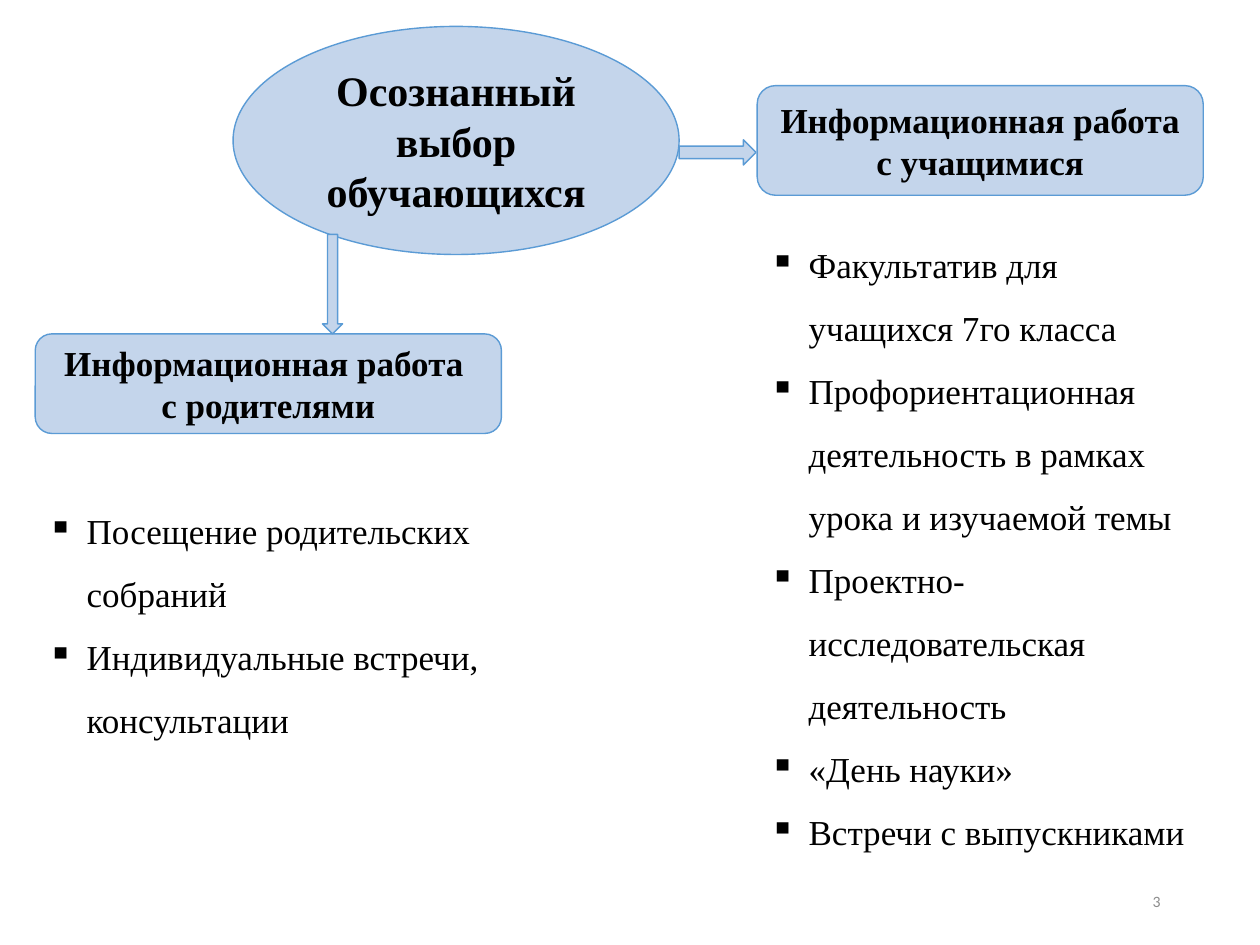
import dataclasses

import pptx
import pptx.util
import pptx.dml.color
import pptx.enum.shapes
import pptx.enum.text
from lxml import etree

Inches = pptx.util.Inches
Pt = pptx.util.Pt
RGB = pptx.dml.color.RGBColor
Shape = pptx.enum.shapes.MSO_SHAPE
Align = pptx.enum.text.PP_ALIGN
Anchor = pptx.enum.text.MSO_ANCHOR
AutoSize = pptx.enum.text.MSO_AUTO_SIZE


@dataclasses.dataclass(frozen=True)
class Theme:
    font: str = "Times New Roman"
    number_font: str = "Calibri"
    fill: RGB = RGB(0xC4, 0xD5, 0xEB)
    line: RGB = RGB(0x5B, 0x9B, 0xD5)
    ink: RGB = RGB(0, 0, 0)
    muted: RGB = RGB(0x8C, 0x8C, 0x8C)
    line_width: float = 0.79
    goal_size: int = 24
    body_size: int = 20
    number_size: int = 9


THEME = Theme()


def write(frame, lines, size, color=THEME.ink, font=THEME.font, bold=False, align=Align.LEFT):
    frame.word_wrap = True
    frame.text = "\n".join(lines)
    for paragraph in frame.paragraphs:
        paragraph.alignment = align
        for run in paragraph.runs:
            run.font.name = font
            run.font.size = Pt(size)
            run.font.bold = bold
            run.font.color.rgb = color


def add_block(slide, kind, box, lines=(), size=THEME.body_size):
    block = slide.shapes.add_shape(kind, *map(Inches, box))
    block.shadow.inherit = False
    block.fill.solid()
    block.fill.fore_color.rgb = THEME.fill
    block.line.color.rgb = THEME.line
    block.line.width = Pt(THEME.line_width)
    if lines:
        block.text_frame.vertical_anchor = Anchor.MIDDLE
        write(block.text_frame, lines, size, bold=True, align=Align.CENTER)


def add_bullets(slide, box, items):
    frame = slide.shapes.add_textbox(*map(Inches, box)).text_frame
    write(frame, items, THEME.body_size)
    frame.auto_size = AutoSize.SHAPE_TO_FIT_TEXT
    indent = Inches(0.31)
    for paragraph in frame.paragraphs:
        paragraph.line_spacing = 1.5
        properties = paragraph._p.get_or_add_pPr()
        properties.set("marL", str(indent))
        properties.set("indent", str(-indent))
        bullet = etree.SubElement(properties, pptx.oxml.ns.qn("a:buChar"))
        bullet.set("char", "▪")


def add_slide_number(slide, box, number):
    frame = slide.shapes.add_textbox(*map(Inches, box)).text_frame
    frame.vertical_anchor = Anchor.MIDDLE
    write(frame, [number], THEME.number_size, THEME.muted, THEME.number_font, align=Align.RIGHT)


def main():
    deck = pptx.Presentation()
    deck.slide_width, deck.slide_height = Inches(10), Inches(7.5)
    slide = deck.slides.add_slide(deck.slide_layouts[6])

    parents_left, parents_width = 0.28, 3.7
    pupils_left, pupils_width = 6.01, 3.54

    add_slide_number(slide, (7.06, 6.95, 2.25, 0.4), "3")
    add_block(slide, Shape.OVAL, (1.85, 0.21, 3.54, 1.81),
              ["Осознанный выбор", "обучающихся"], THEME.goal_size)
    add_block(slide, Shape.ROUNDED_RECTANGLE, (parents_left, 2.65, parents_width, 0.79),
              ["Информационная работа ", "с родителями"])
    add_block(slide, Shape.ROUNDED_RECTANGLE, (pupils_left, 0.68, pupils_width, 0.87),
              ["Информационная работа с учащимися"])
    add_block(slide, Shape.DOWN_ARROW, (2.56, 1.86, 0.16, 0.79))
    add_block(slide, Shape.RIGHT_ARROW, (5.39, 1.11, 0.61, 0.2))

    add_bullets(slide, (parents_left, 3.83, parents_width, 2.06), [
        "Посещение родительских собраний",
        "Индивидуальные встречи, консультации",
    ])
    add_bullets(slide, (pupils_left, 1.72, pupils_width, 5.45), [
        "Факультатив для учащихся 7го класса",
        "Профориентационная деятельность в рамках урока и изучаемой темы",
        "Проектно-исследовательская деятельность",
        "«День науки»",
        "Встречи с выпускниками",
    ])
    deck.save("out.pptx")


if __name__ == "__main__":
    main()
